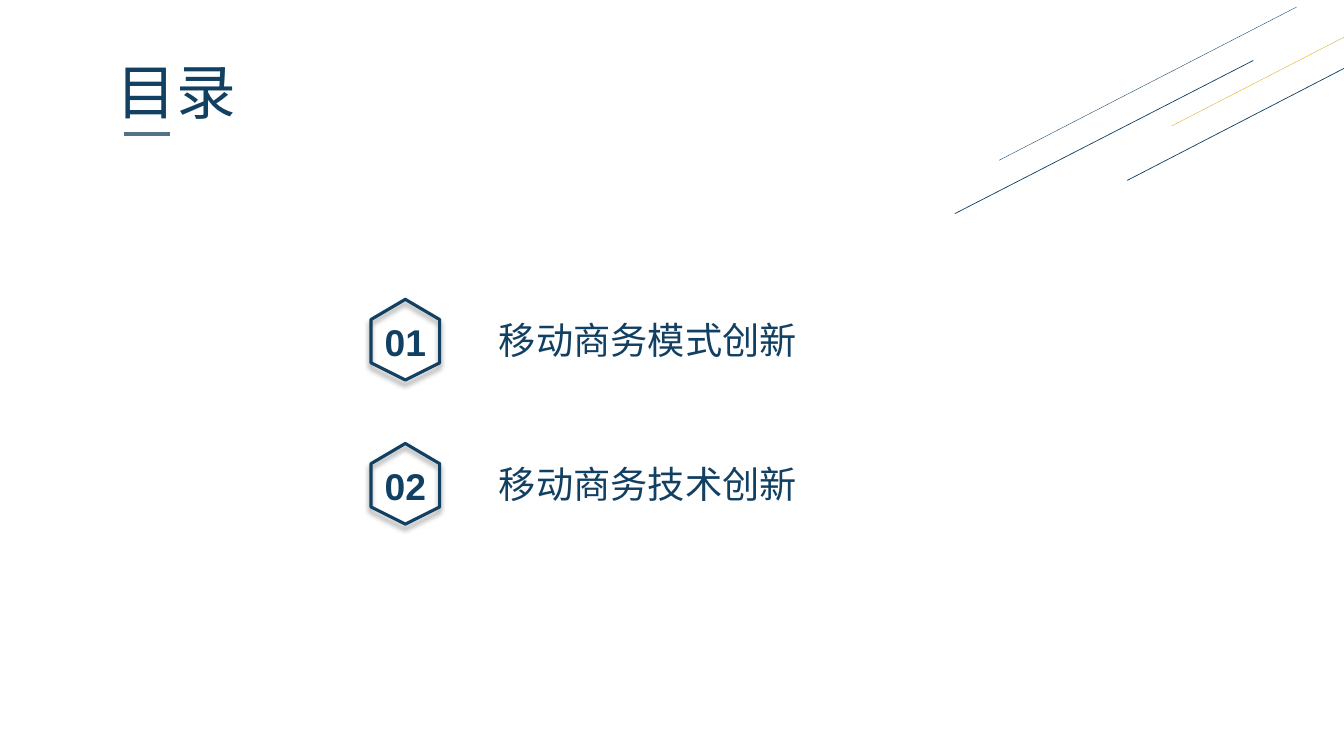
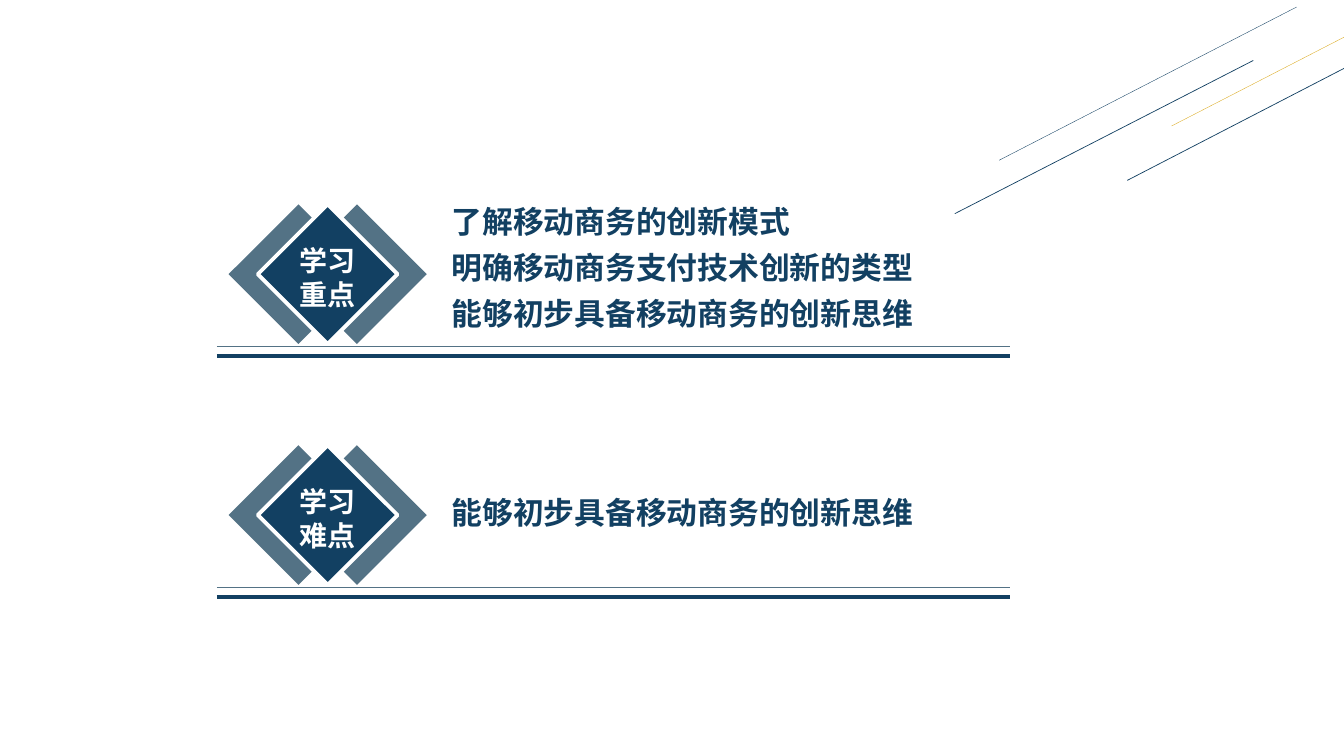
from pptx import Presentation
from pptx.dml.color import RGBColor
from pptx.enum.shapes import MSO_CONNECTOR, MSO_SHAPE
from pptx.enum.text import PP_ALIGN
from pptx.oxml.ns import qn
from pptx.util import Pt
from lxml.etree import SubElement

PX = 9144  # 100 px to the inch
COLORS = {
    "navy": "124062",
    "slate": "537285",
    "gold": "DCAA1F",
    "white": "FFFFFF",
    "black": "000000",
}
HAN = "Noto Sans CJK SC"
RAYS = [
    (947, 212, 1243, 60, "navy", 0.5),
    (991, 159, 1286, 7, "navy", 0.25),
    (1118, 179, 1414, 26, "navy", 0.5),
    (1162, 125, 1457, -27, "gold", 0.25),
]
TOPICS = ["移动商务模式创新", "移动商务技术创新"]
GOALS = [
    (["学习", "重点"], 187, 149,
     ["了解移动商务的创新模式", "明确移动商务支付技术创新的类型", "能够初步具备移动商务的创新思维"]),
    (["学习", "难点"], 476, 56, ["能够初步具备移动商务的创新思维"]),
]


def rgb(name):
    return RGBColor.from_string(COLORS[name])


def add_line(slide, x1, y1, x2, y2, color, width):
    line = slide.shapes.add_connector(
        MSO_CONNECTOR.STRAIGHT, x1 * PX, y1 * PX, x2 * PX, y2 * PX)
    line.line.color.rgb = rgb(color)
    line.line.width = Pt(width)
    SubElement(line.element.spPr, qn("a:effectLst"))


def add_text(slide, box, lines, size, color="navy", font=HAN, bold=False,
             align=PP_ALIGN.LEFT, gap=1.0, wrap=False):
    frame = slide.shapes.add_textbox(*(n * PX for n in box)).text_frame
    frame.word_wrap = wrap
    frame.text = "\n".join(lines)
    for para in frame.paragraphs:
        para.alignment = align
        para.line_spacing = gap
        for run in para.runs:
            run.font.size = Pt(size)
            run.font.bold = bold
            run.font.color.rgb = rgb(color)
            run.font.name = font
            SubElement(run.font._element, qn("a:ea"), typeface=font)


def add_shadow(shape):
    """Cast a soft shadow straight down."""
    shape.shadow.inherit = False
    effects = shape.element.spPr.find(qn("a:effectLst"))
    outer = SubElement(effects, qn("a:outerShdw"), blurRad=str(Pt(4)),
                       dist=str(Pt(3)), dir="5400000", algn="t", rotWithShape="0")
    tint = SubElement(outer, qn("a:srgbClr"), val=COLORS["black"])
    SubElement(tint, qn("a:alpha"), val="40000")


def add_hexagon(slide, x, y):
    points = [(68, 20), (68, 63), (34, 80), (0, 63), (0, 20)]
    builder = slide.shapes.build_freeform(x + 34, y, scale=PX)
    builder.add_line_segments([(x + dx, y + dy) for dx, dy in points], close=True)
    shape = builder.convert_to_shape()
    shape.fill.background()
    shape.line.color.rgb = rgb("navy")
    shape.line.width = Pt(2.25)
    add_shadow(shape)


def add_diamond(slide, x, y, color, edge=None):
    side = 98 * PX
    shape = slide.shapes.add_shape(MSO_SHAPE.RECTANGLE, x * PX, y * PX, side, side)
    shape.rotation = 45
    shape.shadow.inherit = False
    shape.fill.solid()
    shape.fill.fore_color.rgb = rgb(color)
    if edge:
        shape.line.color.rgb = rgb(edge)
        shape.line.width = Pt(2.75)
    else:
        shape.line.fill.background()


def add_rays(slide):
    for ray in RAYS:
        add_line(slide, *ray)


def add_topic(slide, index, topic):
    top = 297 + 143 * index
    add_hexagon(slide, 368, top)
    add_text(slide, (371, top + 15, 62, 55), [f"{index + 1:02}"], 26.6,
             font="Arial", bold=True, align=PP_ALIGN.CENTER)
    add_text(slide, (485, top + 13, 429, 55), [topic], 26.6, wrap=True)


def add_goal(slide, index, label, text_top, height, lines):
    top = 223 + 239 * index
    add_line(slide, 215, top + 121, 1002, top + 121, "slate", 1)
    for x in (305, 247):
        add_diamond(slide, x, top, "slate")
    add_diamond(slide, 276, top, "navy", "white")
    add_text(slide, (287, top + 14, 76, 77), label, 20, "white", bold=True)
    add_line(slide, 215, top + 130, 1002, top + 130, "navy", 3)
    add_text(slide, (438, text_top, 478, height), lines, 22, bold=True, gap=1.25)


def add_contents(slide):
    add_text(slide, (106, 49, 153, 82), ["目录"], 42.6, wrap=True)
    add_line(slide, 123, 133, 169, 133, "slate", 2.25)
    add_rays(slide)
    for index, topic in enumerate(TOPICS):
        add_topic(slide, index, topic)


def add_goals(slide):
    add_rays(slide)
    for index, goal in enumerate(GOALS):
        add_goal(slide, index, *goal)


def main():
    deck = Presentation()
    deck.slide_width, deck.slide_height = 1333 * PX, 750 * PX
    for build in (add_contents, add_goals):
        build(deck.slides.add_slide(deck.slide_layouts[6]))
    deck.save("out.pptx")


if __name__ == "__main__":
    main()
